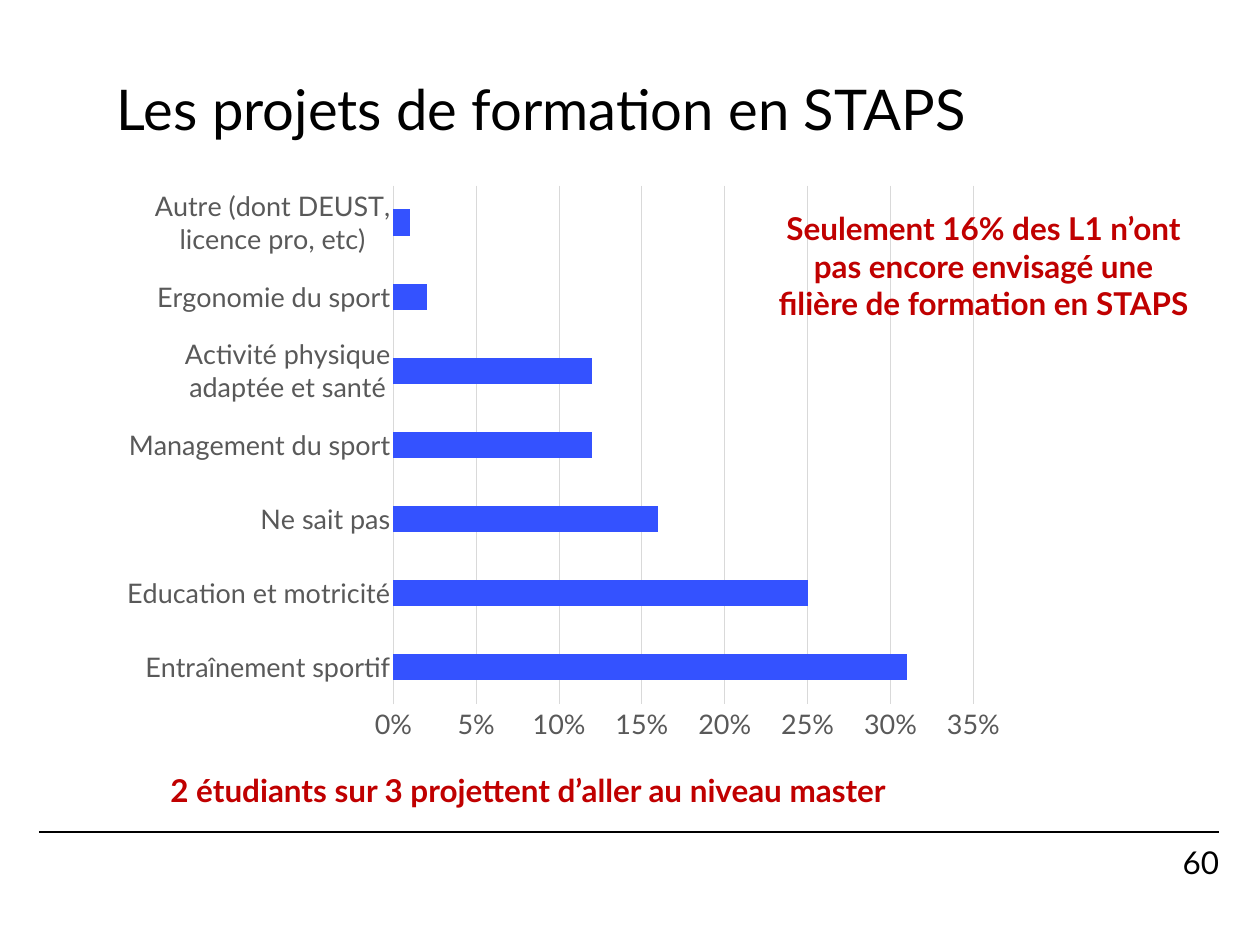
from lxml import etree
from pptx import Presentation
from pptx.chart.data import CategoryChartData
from pptx.dml.color import RGBColor
from pptx.enum.chart import XL_CHART_TYPE as ChartType, XL_TICK_MARK as TickMark
from pptx.enum.shapes import MSO_CONNECTOR as Connector
from pptx.enum.text import MSO_ANCHOR as Anchor, PP_ALIGN as Align
from pptx.oxml.ns import qn
from pptx.util import Pt

# Content
FONT = "Lato"
COLORS = {"ink": "000000", "accent": "C00000", "bar": "3452FF",
          "label": "595959", "grid": "D9D9D9"}
PROJECTS = [
    ("Entraînement sportif", 0.31),
    ("Education et motricité", 0.25),
    ("Ne sait pas", 0.16),
    ("Management du sport", 0.12),
    ("Activité physique adaptée et santé", 0.12),
    ("Ergonomie du sport", 0.02),
    ("Autre (dont DEUST, licence pro, etc)", 0.01),
]
# text, (left, top, width, height), size, color, bold, alignment, anchor, inset, line spacing
TITLE = ("Les projets de formation en STAPS", (109, 33, 1109, 158),
         50, "ink", False, Align.LEFT, Anchor.MIDDLE, (8, 4), 0.9)
MASTER_NOTE = ("2 étudiants sur 3 projettent d’aller au niveau master", (159, 767, 738, 46),
               28, "accent", True, Align.CENTER, Anchor.TOP, (8, 4), 1.0)
UNDECIDED_NOTE = ("Seulement 16% des L1 n’ont pas encore envisagé une filière de formation en STAPS",
                  (764, 205, 439, 122),
                  28, "accent", True, Align.CENTER, Anchor.TOP, (8, 4), 1.0)
PAGE_NUMBER = ("60", (1034, 843, 185, 38),
               28, "ink", False, Align.RIGHT, Anchor.MIDDLE, (0, 0), 1.0)
CHART_BOX = (109, 174, 909, 578)
FOOTER_RULE = (39, 832, 1219, 832)
PX = 11317


def emu(lengths):
    return [length * PX for length in lengths]


def color(name):
    return RGBColor.from_string(COLORS[name])


def style(font, size, name, bold=False):
    font.name, font.size, font.bold = FONT, Pt(size), bold
    font.color.rgb = color(name)


def stroke(line, name, width):
    line.color.rgb = color(name)
    line.width = Pt(width)


def add_text(page, text, place, size, name, bold, align, anchor, inset, spacing):
    frame = page.shapes.add_textbox(*emu(place)).text_frame
    frame.word_wrap = True
    frame.vertical_anchor = anchor
    side, edge = emu(inset)
    frame.margin_left = frame.margin_right = side
    frame.margin_top = frame.margin_bottom = edge
    para = frame.paragraphs[0]
    para.alignment = align
    para.line_spacing = spacing
    span = para.add_run()
    span.text = text
    style(span.font, size, name, bold)


def add_projects_chart(page):
    data = CategoryChartData(number_format="0%")
    data.categories = [project for project, share in PROJECTS]
    data.add_series("Series 1", [share for project, share in PROJECTS])
    chart = page.shapes.add_chart(ChartType.BAR_CLUSTERED, *emu(CHART_BOX), data).chart
    style(chart.font, 24, "ink")
    chart.has_legend = chart.has_title = False

    # Bars
    plot = chart.plots[0]
    plot.gap_width = 182
    plot.vary_by_categories = False
    fill = plot.series[0].format.fill
    fill.solid()
    fill.fore_color.rgb = color("bar")

    # Axes
    projects, shares = chart.category_axis, chart.value_axis
    for axis in (projects, shares):
        axis.major_tick_mark = axis.minor_tick_mark = TickMark.NONE
        style(axis.tick_labels.font, 24, "label")
    stroke(projects.format.line, "grid", 0.75)
    shares.format.line.fill.background()
    shares.has_major_gridlines = True
    stroke(shares.major_gridlines.format.line, "grid", 0.75)
    shares.minimum_scale, shares.maximum_scale, shares.major_unit = 0, 0.35, 0.05
    shares.tick_labels.number_format = "0%"
    shares.tick_labels.number_format_is_linked = False


deck = Presentation()
deck.slide_width, deck.slide_height = emu((1260, 945))
page = deck.slides.add_slide(deck.slide_layouts[6])

# Footer
rule = page.shapes.add_connector(Connector.STRAIGHT, *emu(FOOTER_RULE))
stroke(rule.line, "ink", 2)
etree.SubElement(rule._element.spPr, qn("a:effectLst"))
add_text(page, *PAGE_NUMBER)

# Title, chart and notes
add_text(page, *TITLE)
add_text(page, *MASTER_NOTE)
add_projects_chart(page)
add_text(page, *UNDECIDED_NOTE)

deck.save("out.pptx")
